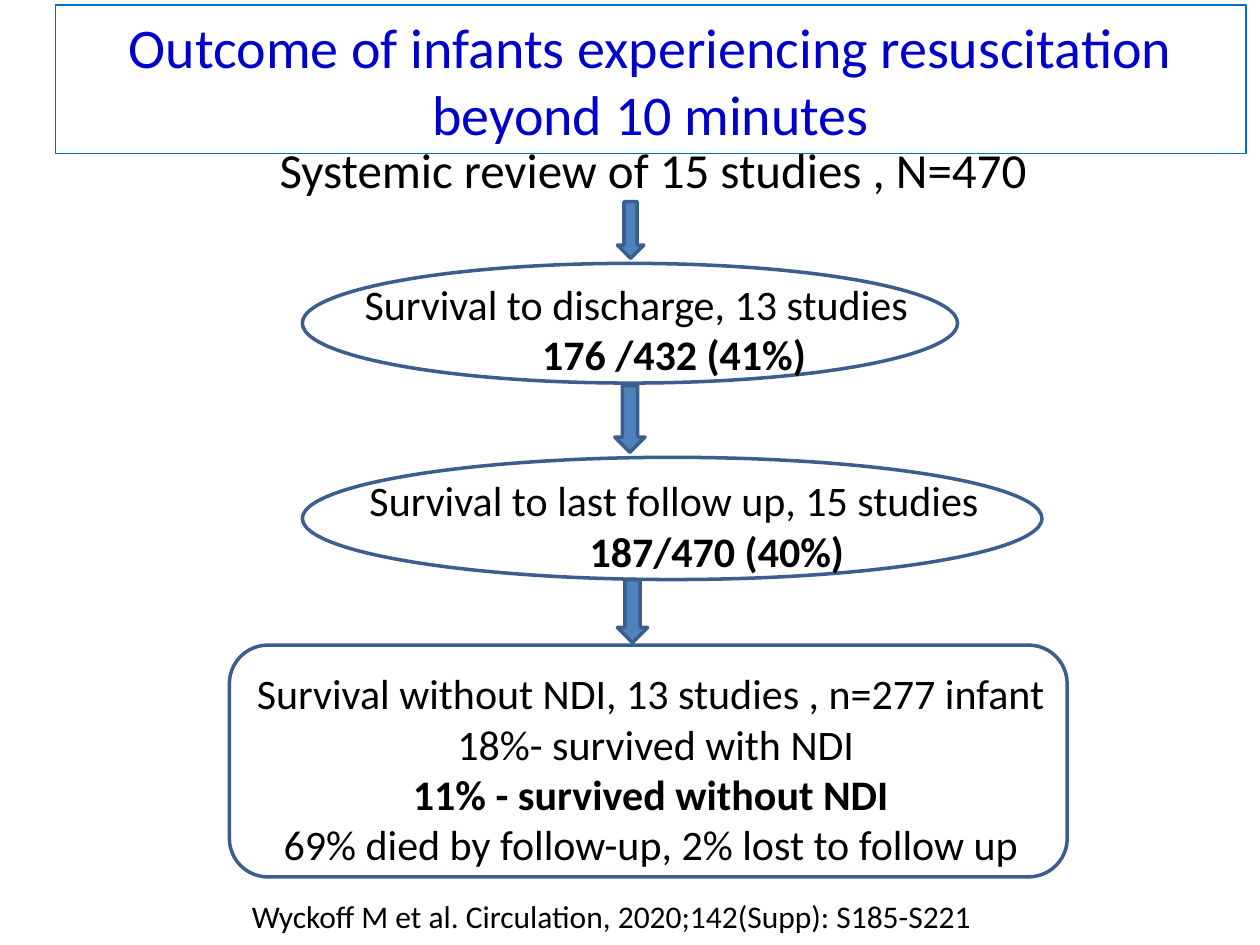
from pptx import Presentation
from pptx.dml.color import RGBColor
from pptx.enum.shapes import MSO_SHAPE
from pptx.enum.text import MSO_ANCHOR, MSO_AUTO_SIZE, PP_ALIGN
from pptx.util import Inches, Pt

ELLIPSE, ROUNDED, DOWN_ARROW = MSO_SHAPE.OVAL, MSO_SHAPE.ROUNDED_RECTANGLE, MSO_SHAPE.DOWN_ARROW
LEFT, CENTER = PP_ALIGN.LEFT, PP_ALIGN.CENTER
BLACK = RGBColor(0x00, 0x00, 0x00)
TITLE_BLUE = RGBColor(0x00, 0x00, 0xCC)
TITLE_BORDER = RGBColor(0x00, 0x70, 0xC0)
ARROW_FILL = RGBColor(0x4F, 0x81, 0xBD)
OUTLINE = RGBColor(0x3A, 0x5F, 0x8C)

prs = Presentation()
prs.slide_width, prs.slide_height = Inches(10), Inches(7.5)
slide = prs.slides.add_slide(prs.slide_layouts[5])


def write_lines(frame, lines, size, color, align):
    """Each line is (text, bold, left indent in inches)."""
    frame.word_wrap = True
    frame.auto_size = MSO_AUTO_SIZE.NONE
    for number, (text, bold, indent) in enumerate(lines):
        paragraph = frame.paragraphs[0] if number == 0 else frame.add_paragraph()
        paragraph.alignment = align
        if indent:
            paragraph._p.get_or_add_pPr().set("marL", str(Inches(indent)))
        run = paragraph.add_run()
        run.text = text
        font_format = {"name": "Calibri", "size": Pt(size), "bold": bold}
        for attribute, value in font_format.items():
            setattr(run.font, attribute, value)
        run.font.color.rgb = color


# Title
title = slide.shapes.title
title.left, title.top, title.width, title.height = map(Inches, (0.44, 0.04, 9.45, 1.18))
title.line.color.rgb = TITLE_BORDER
title.line.width = Pt(0.75)
title.text_frame.vertical_anchor = MSO_ANCHOR.MIDDLE
write_lines(title.text_frame,
            [("Outcome of infants experiencing resuscitation beyond 10 minutes", False, 0)],
            32, TITLE_BLUE, CENTER)

# Flow outlines and arrows
flow = [
    (ELLIPSE, 2.4, 2.09, 5.2, 0.95),
    (ELLIPSE, 2.4, 3.63, 5.87, 0.97),
    (ROUNDED, 1.82, 5.12, 6.65, 1.84),
    (DOWN_ARROW, 4.9, 1.6, 0.21, 0.45),
    (DOWN_ARROW, 4.88, 3.06, 0.24, 0.53),
    (DOWN_ARROW, 4.9, 4.6, 0.24, 0.5),
]
for kind, *bounds in flow:
    step = slide.shapes.add_shape(kind, *map(Inches, bounds))
    step.shadow.inherit = False
    step.line.color.rgb = OUTLINE
    step.line.width = Pt(2)
    if kind == DOWN_ARROW:
        step.fill.solid()
        step.fill.fore_color.rgb = ARROW_FILL
    else:
        step.fill.background()

# Study results and citation
statements = [
    ((2.12, 1.06, 6.35, 0.57), 28, LEFT,
     [("Systemic review of 15 studies , N=470", False, 0)]),
    ((2.41, 2.16, 5.28, 0.91), 24, CENTER,
     [("Survival to discharge, 13 studies", False, 0),
      ("176 /432 (41%)", True, 0.6)]),
    ((2.24, 3.72, 6.22, 0.91), 24, CENTER,
     [("Survival to last follow up, 15 studies", False, 0),
      ("187/470 (40%)", True, 0.68)]),
    ((0.99, 5.25, 8.35, 1.72), 24, CENTER,
     [("Survival without NDI, 13 studies , n=277 infant", False, 0),
      ("18%- survived with NDI", False, 0.08),
      ("11% - survived without NDI", True, 0),
      ("69% died by follow-up, 2% lost to follow up", False, 0)]),
    ((1.9, 7.07, 6.38, 0.4), 18, LEFT,
     [("Wyckoff M et al. Circulation, 2020;142(Supp): S185-S221", False, 0)]),
]
for bounds, size, align, lines in statements:
    statement = slide.shapes.add_textbox(*map(Inches, bounds))
    write_lines(statement.text_frame, lines, size, BLACK, align)

prs.save("out.pptx")
